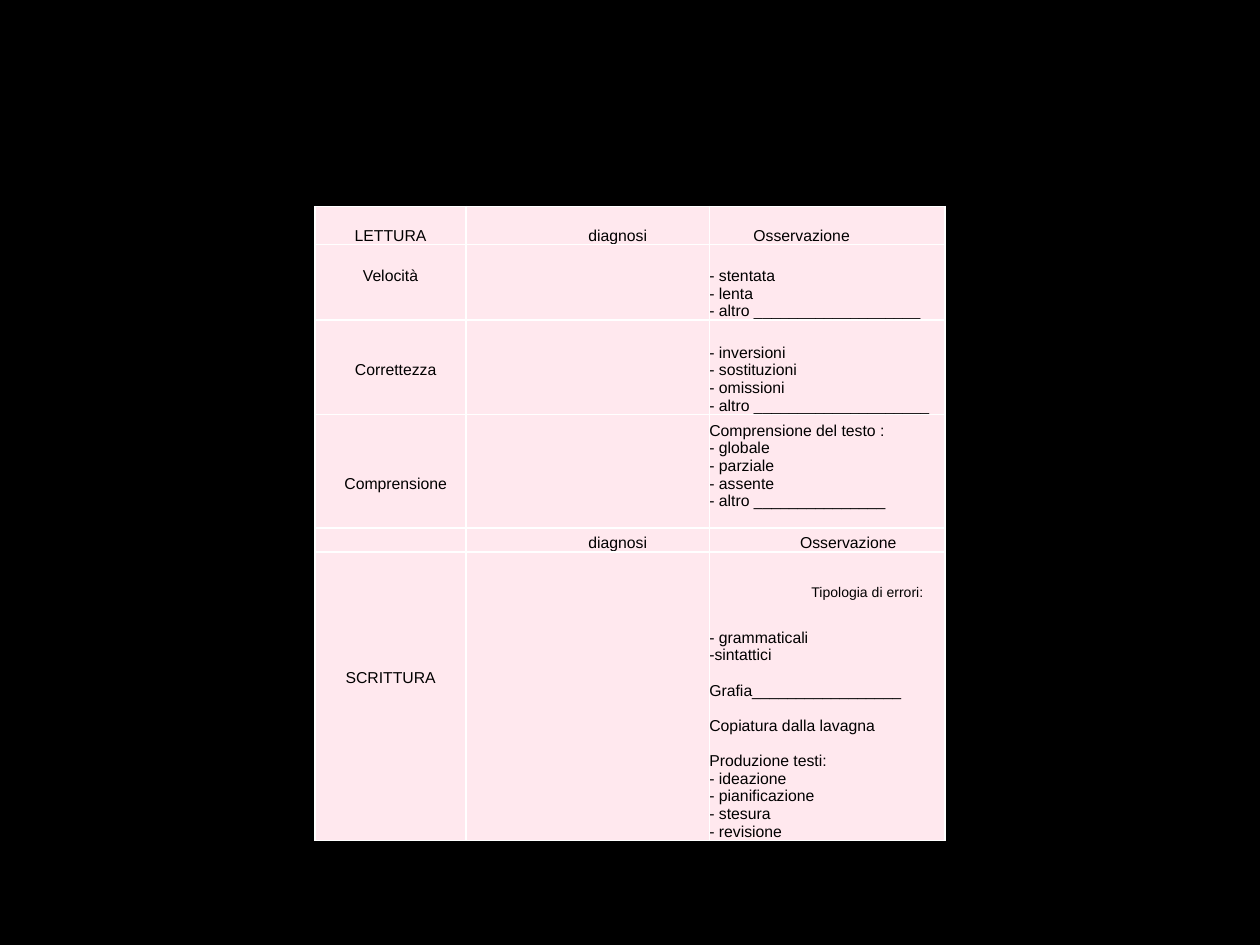
from lxml import etree
from pptx import Presentation
from pptx.dml.color import RGBColor
from pptx.enum import text
from pptx.oxml.ns import qn
from pptx.util import Inches, Pt

BLACK = RGBColor(0, 0, 0)
WHITE = RGBColor(255, 255, 255)
PINK = RGBColor(0xFF, 0xE8, 0xEE)

COLS = [1.2, 1.93, 1.87]
ROWS = [0.3, 0.6, 0.75, 0.9, 0.19, 2.29]
LINE = 0.14
CENTER = text.PP_ALIGN.CENTER
MIDDLE = text.MSO_ANCHOR.MIDDLE
BOTTOM = text.MSO_ANCHOR.BOTTOM

# (row, column): lines of text, then the layout options of write()
CELLS = {
    (0, 0): (["LETTURA"], dict(align=CENTER)),
    (0, 1): (["diagnosi"], dict(left=0.97, lead=13.2)),
    (0, 2): (["Osservazione"], dict(left=0.35, lead=13.2)),
    (1, 0): (["Velocità"], dict(left=0.38, below=2 * LINE)),
    (1, 2): (["- stentata", "- lenta", "- altro ___________________"], {}),
    (2, 0): (["Correttezza"], dict(align=CENTER, left=0.08, below=2 * LINE)),
    (2, 2): (["- inversioni", "- sostituzioni", "- omissioni",
              "- altro ____________________"], {}),
    (3, 0): (["Comprensione"], dict(align=CENTER, left=0.08, below=2 * LINE)),
    (3, 2): (["Comprensione del testo :", "- globale", "- parziale",
              "- assente", "- altro _______________"], dict(below=LINE)),
    (4, 1): (["diagnosi"], dict(left=0.97, lead=13.3)),
    (4, 2): (["Osservazione"], dict(left=0.72, lead=13.3)),
    (5, 0): (["SCRITTURA"], dict(align=CENTER, below=2 * LINE, anchor=MIDDLE)),
    (5, 2): (["Tipologia di errori:", "- grammaticali", "-sintattici",
              "Grafia_________________", "Copiatura dalla lavagna",
              "Produzione testi:", "- ideazione", "- pianificazione",
              "- stesura", "- revisione"],
             dict(gaps={1: 16.3, 3: 10, 4: 10, 5: 10})),
}


def indent(para, left):
    para._p.get_or_add_pPr().set("marL", str(Inches(left)))


def write(cell, lines, align=None, left=0, below=0, lead=None,
          anchor=BOTTOM, gaps=None):
    """Set the lines; gaps gives the points of space before a line number."""
    cell.text_frame.text = "\n".join(lines)
    cell.margin_bottom = Inches(below)
    cell.vertical_anchor = anchor
    for num, para in enumerate(cell.text_frame.paragraphs):
        para.alignment = align
        indent(para, left)
        para.space_before = Pt((gaps or {}).get(num, 0))
        if lead:
            para.line_spacing = Pt(lead)
        for run in para.runs:
            run.font.name = "Arial"
            run.font.size = Pt(9)
            run.font.color.rgb = BLACK


def frame(cell):
    """Give the cell thin white borders, placed ahead of its fill."""
    props = cell._tc.get_or_add_tcPr()
    for num, side in enumerate(("lnL", "lnR", "lnT", "lnB")):
        line = etree.Element(qn("a:" + side), w=str(Pt(1)))
        solid = etree.SubElement(line, qn("a:solidFill"))
        etree.SubElement(solid, qn("a:srgbClr"), val=str(WHITE))
        props.insert(num, line)


def style(cell):
    cell.fill.solid()
    cell.fill.fore_color.rgb = PINK
    cell.margin_left = cell.margin_right = 0
    cell.margin_top = cell.margin_bottom = 0
    para = cell.text_frame.paragraphs[0]
    para._p.get_or_add_endParaRPr().set("sz", "900")
    frame(cell)


def grid(slide, left, top):
    """Build the reading and writing table at the given corner."""
    table = slide.shapes.add_table(
        len(ROWS), len(COLS), Inches(left), Inches(top),
        Inches(sum(COLS)), Inches(sum(ROWS))).table
    table.first_row = table.horz_banding = False
    for col, width in zip(table.columns, COLS):
        col.width = Inches(width)
    for row, height in zip(table.rows, ROWS):
        row.height = Inches(height)
    for cell in table.iter_cells():
        style(cell)
    for (row, col), (lines, opts) in CELLS.items():
        write(table.cell(row, col), lines, **opts)
    kind = table.cell(5, 2).text_frame.paragraphs[0]
    indent(kind, 0.81)
    kind.runs[0].font.size = Pt(8)


def main():
    deck = Presentation()
    deck.slide_width, deck.slide_height = Inches(10), Inches(7.5)
    slide = deck.slides.add_slide(deck.slide_layouts[6])
    slide.background.fill.solid()
    slide.background.fill.fore_color.rgb = BLACK
    grid(slide, 2.5, 1.64)
    deck.save("out.pptx")


if __name__ == "__main__":
    main()
